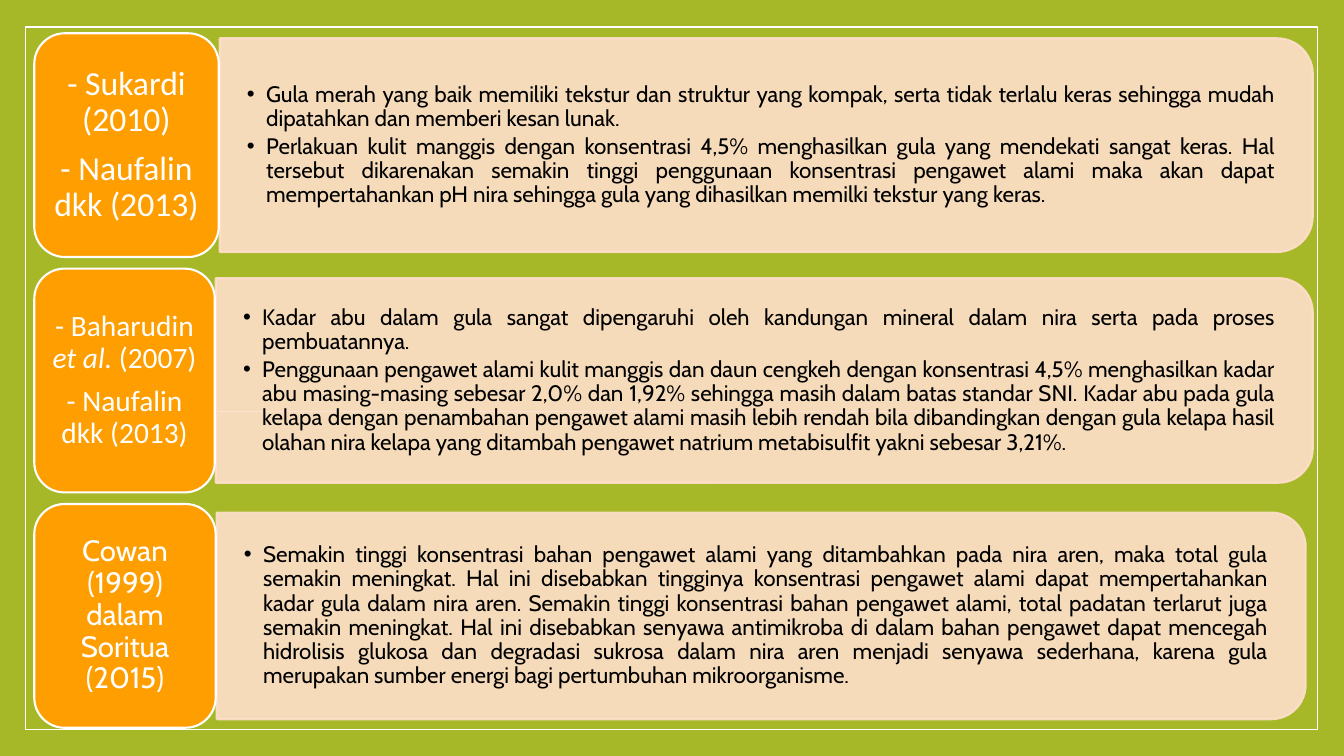
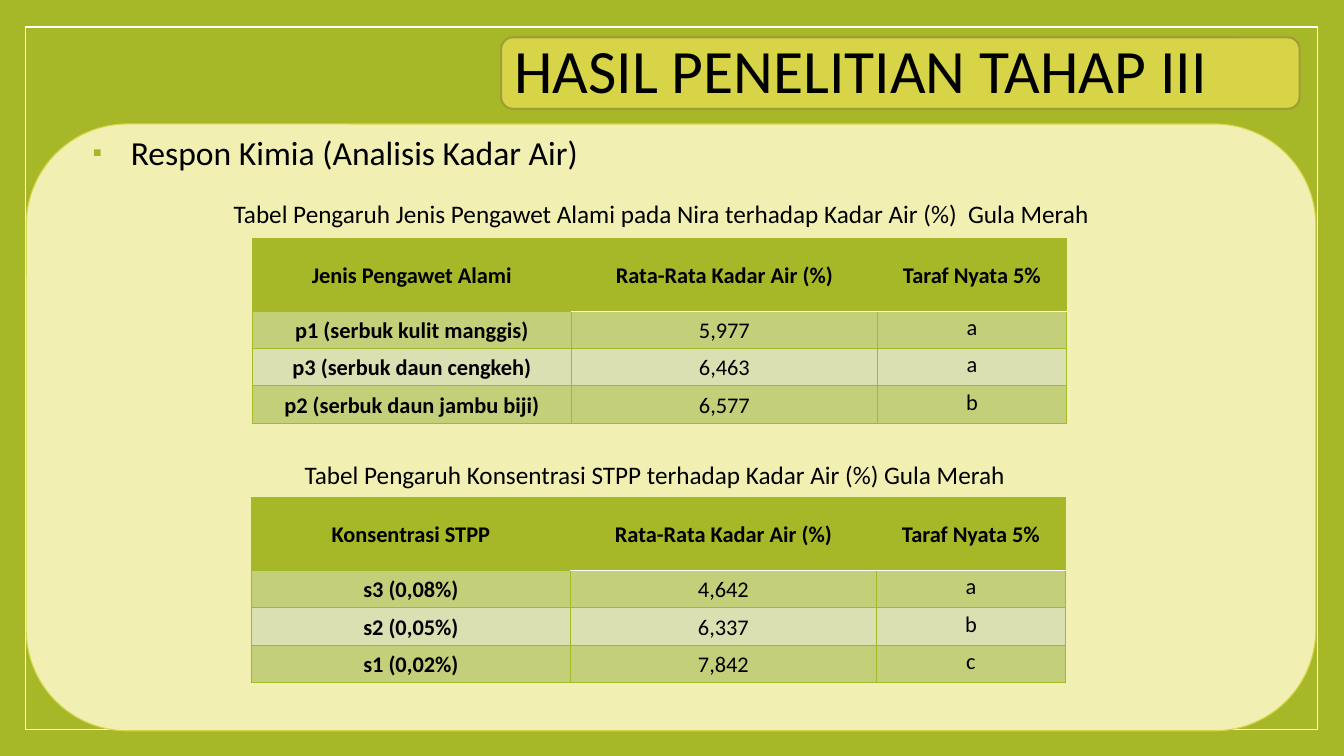
from lxml import etree
from pptx import Presentation
from pptx.dml.color import RGBColor
from pptx.enum.shapes import MSO_CONNECTOR, MSO_SHAPE
from pptx.enum.text import MSO_ANCHOR, MSO_AUTO_SIZE, PP_ALIGN
from pptx.oxml.ns import qn
from pptx.util import Inches, Pt

RECT, ROUND = MSO_SHAPE.RECTANGLE, MSO_SHAPE.ROUNDED_RECTANGLE
ROUND_TOP = MSO_SHAPE.ROUND_2_SAME_RECTANGLE
STRAIGHT = MSO_CONNECTOR.STRAIGHT
TOP, MIDDLE = MSO_ANCHOR.TOP, MSO_ANCHOR.MIDDLE
LEFT, CENTER, JUSTIFY = PP_ALIGN.LEFT, PP_ALIGN.CENTER, PP_ALIGN.JUSTIFY
NO_FIT = MSO_AUTO_SIZE.NONE

GREEN, WHITE, BLACK = "A6B727", "FFFFFF", "000000"
ORANGE, PEACH = "FE9E00", "FFDFCC"
YELLOW, OLIVE, CREAM = "D7D447", "9F9D35", "F1F0B2"
BANDS = ("C4CF7A", "DAE0B2")
THIN = 0.79

CARD_X, CARD_Y, CARD_H, CARD_STEP = 0.34, 0.33, 2.22, 2.335
CARDS = [
    dict(source=["- Sukardi (2010)", "- Naufalin dkk (2013)"], size=24, font="Calibri",
         width=1.83, right=13.02, height=2.12, points=[
             "Gula merah yang baik memiliki tekstur dan struktur yang kompak, serta tidak "
             "terlalu keras sehingga mudah dipatahkan dan memberi kesan lunak.",
             "Perlakuan kulit manggis dengan konsentrasi 4,5% menghasilkan gula yang "
             "mendekati sangat keras. Hal tersebut dikarenakan semakin tinggi penggunaan "
             "konsentrasi pengawet alami maka akan dapat mempertahankan pH nira sehingga "
             "gula yang dihasilkan memilki tekstur yang keras."]),
    dict(source=["- Baharudin *et al.* (2007)", "- Naufalin dkk (2013)"], size=21,
         font="Calibri", width=1.79, right=13.02, height=2.03, points=[
             "Kadar abu dalam gula sangat dipengaruhi oleh kandungan mineral dalam nira "
             "serta pada proses pembuatannya.",
             "Penggunaan pengawet alami kulit manggis dan daun cengkeh dengan konsentrasi "
             "4,5% menghasilkan kadar abu masing-masing sebesar 2,0% dan 1,92% sehingga "
             "masih dalam batas standar SNI. Kadar abu pada gula kelapa dengan penambahan "
             "pengawet alami masih lebih rendah bila dibandingkan dengan gula kelapa hasil "
             "olahan nira kelapa yang ditambah pengawet natrium metabisulfit yakni sebesar "
             "3,21%."]),
    dict(source=["Cowan (1999) dalam Soritua (2015)"], size=21, font="Cabin",
         width=1.8, right=12.95, height=2.05, points=[
             "Semakin tinggi konsentrasi bahan pengawet alami yang ditambahkan pada nira "
             "aren, maka total gula semakin meningkat. Hal ini disebabkan tingginya "
             "konsentrasi pengawet alami dapat mempertahankan kadar gula dalam nira aren. "
             "Semakin tinggi konsentrasi bahan pengawet alami, total padatan terlarut juga "
             "semakin meningkat. Hal ini disebabkan senyawa antimikroba di dalam bahan "
             "pengawet dapat mencegah hidrolisis glukosa dan degradasi sukrosa dalam nira "
             "aren menjadi senyawa sederhana, karena gula merupakan sumber energi bagi "
             "pertumbuhan mikroorganisme."]),
]

COLUMNS = [3.17, 3.03, 1.88]
MEASURES = ["Rata-Rata Kadar Air (%)", "Taraf Nyata 5%"]
TABLES = [
    dict(caption="Tabel Pengaruh Jenis Pengawet Alami pada Nira terhadap Kadar Air (%)  Gula Merah",
         caption_at=(2.05, 1.95, 9.02, 0.41), x=2.5, y=2.37, rows=[
             ["Jenis Pengawet Alami", *MEASURES],
             ["p1 (serbuk kulit manggis)", "5,977", "a"],
             ["p3 (serbuk daun cengkeh)", "6,463", "a"],
             ["p2 (serbuk daun jambu biji)", "6,577", "b"]]),
    dict(caption="Tabel Pengaruh Konsentrasi STPP terhadap Kadar Air (%) Gula Merah",
         caption_at=(2.26, 4.54, 8.47, 0.41), x=2.49, y=4.94, rows=[
             ["Konsentrasi STPP", *MEASURES],
             ["s3 (0,08%)", "4,642", "a"],
             ["s2 (0,05%)", "6,337", "b"],
             ["s1 (0,02%)", "7,842", "c"]]),
]


def rgb(color):
    """Turn a hex string into a colour."""
    return RGBColor.from_string(color)


def set_alpha(fill_format, percent):
    """Make a solid colour partly transparent."""
    for clr in fill_format.iter(qn("a:srgbClr")):
        etree.SubElement(clr, qn("a:alpha"), val=str(percent * 1000))


def set_bullet(p, char, indent, color, scale):
    """Give a paragraph a hanging bullet."""
    pPr = p._p.get_or_add_pPr()
    pPr.set("marL", str(Inches(indent)))
    pPr.set("indent", str(-Inches(indent)))
    clr = etree.SubElement(pPr, qn("a:buClr"))
    etree.SubElement(clr, qn("a:srgbClr"), val=color)
    etree.SubElement(pPr, qn("a:buSzPct"), val=str(scale * 1000))
    etree.SubElement(pPr, qn("a:buFont"), typeface="Arial")
    etree.SubElement(pPr, qn("a:buChar"), char=char)


def set_border(cell, side, color, width):
    """Draw one side of a table cell."""
    ln = etree.SubElement(cell._tc.get_or_add_tcPr(), qn(f"a:ln{side}"), w=str(Pt(width)))
    fill = etree.SubElement(ln, qn("a:solidFill"))
    etree.SubElement(fill, qn("a:srgbClr"), val=color)


def write(tf, paragraphs, size=18, font="Calibri", color=BLACK, bold=False, align=LEFT,
          spacing=0.9, after=0, bullet=None):
    """Fill a text frame; words between asterisks are italic."""
    for i, text in enumerate(paragraphs):
        p = tf.add_paragraph() if i else tf.paragraphs[0]
        p.alignment, p.line_spacing = align, spacing
        p.space_before, p.space_after = Pt(0), Pt(after)
        if bullet:
            set_bullet(p, *bullet)
        for j, part in enumerate(text.split("*")):
            r = p.add_run()
            r.text = part
            r.font.size, r.font.name = Pt(size), font
            r.font.bold, r.font.italic = bold, j % 2 == 1
            r.font.color.rgb = rgb(color)


def set_frame(tf, anchor=TOP, inset=(0.1, 0.05)):
    """Set wrapping, anchor and insets of a text frame."""
    tf.word_wrap, tf.auto_size, tf.vertical_anchor = True, NO_FIT, anchor
    tf.margin_left = tf.margin_right = Inches(inset[0])
    tf.margin_top = tf.margin_bottom = Inches(inset[1])
    return tf


class Deck:
    """Hold the shared style and the current slide."""

    def __init__(self):
        self.prs = Presentation()
        self.prs.slide_width, self.prs.slide_height = Inches(13.33), Inches(7.5)
        bg = self.prs.slide_master.background.fill
        bg.solid()
        bg.fore_color.rgb = rgb(GREEN)
        self.s = None

    def slide(self, layout):
        """Start a slide with the white frame."""
        self.s = self.prs.slides.add_slide(self.prs.slide_layouts[layout])
        self.shape(RECT, 0.25, 0.27, 12.82, 6.97, GREEN, WHITE, 1)

    def shape(self, kind, x, y, w, h, fill, line, width=1.5):
        """Add a filled and outlined shape."""
        sp = self.s.shapes.add_shape(kind, Inches(x), Inches(y), Inches(w), Inches(h))
        sp.shadow.inherit = False
        sp.fill.solid()
        sp.fill.fore_color.rgb = rgb(fill)
        sp.line.color.rgb = rgb(line)
        sp.line.width = Pt(width)
        return sp

    def line(self, x1, y1, x2, y2, color, width):
        """Add a straight line."""
        cn = self.s.shapes.add_connector(STRAIGHT, Inches(x1), Inches(y1), Inches(x2), Inches(y2))
        cn.line.color.rgb = rgb(color)
        cn.line.width = Pt(width)
        etree.SubElement(cn._element.spPr, qn("a:effectLst"))

    def text(self, x, y, w, h, paragraphs, anchor=TOP, inset=(0.1, 0.05), **fmt):
        """Add a text box."""
        sp = self.s.shapes.add_textbox(Inches(x), Inches(y), Inches(w), Inches(h))
        write(set_frame(sp.text_frame, anchor, inset), paragraphs, **fmt)

    def title(self, x, y, w, h, text):
        """Set the title on a rounded plate."""
        self.shape(ROUND, x, y, w, h, YELLOW, OLIVE)
        sp = self.s.shapes.title
        sp.left, sp.top, sp.width, sp.height = (Inches(v) for v in (x + 0.03, y, w - 0.06, h))
        self.s.shapes._spTree.append(sp._element)
        write(set_frame(sp.text_frame, MIDDLE), [text], size=44, align=JUSTIFY)

    def card(self, y, source, size, font, width, right, height, points):
        """Add a source card with its panel of findings."""
        x, mid = CARD_X + width + 0.01, y + CARD_H / 2
        w = right - x
        panel = self.shape(ROUND_TOP, x + (w - height) / 2, mid - w / 2, height, w, PEACH, PEACH)
        panel.rotation = 90
        set_alpha(panel._element.spPr, 90)
        self.text(x, mid - height / 2 + 0.1, w - 0.1, height - 0.2, points, MIDDLE, (0.27, 0.14),
                  size=16, font="Cabin", align=JUSTIFY, after=2.8,
                  bullet=("•", 0.19, BLACK, 100))
        sp = self.shape(ROUND, CARD_X, y, width, CARD_H, ORANGE, WHITE)
        write(set_frame(sp.text_frame, MIDDLE, (0.09, 0.04)), source, size=size, font=font,
              color=WHITE, align=CENTER, after=size * 0.37)

    def table(self, x, y, rows):
        """Add a banded table with a tall header."""
        heights = [0.72] + [0.37] * (len(rows) - 1)
        table = self.s.shapes.add_table(len(rows), len(COLUMNS), Inches(x), Inches(y),
                                        Inches(sum(COLUMNS)), Inches(sum(heights))).table
        table.first_row = table.horz_banding = False
        for column, width in zip(table.columns, COLUMNS):
            column.width = Inches(width)
        for i, (values, height) in enumerate(zip(rows, heights)):
            table.rows[i].height = Inches(height)
            for j, value in enumerate(values):
                self.cell(table.cell(i, j), i, j, value)

    def cell(self, cell, i, j, value):
        """Format and fill one table cell."""
        for side in "LRTB":
            rule = j > 0 and (i, side) in ((0, "B"), (1, "T"))
            set_border(cell, side, WHITE if rule else GREEN, 1.5 if rule else THIN)
        cell.fill.solid()
        cell.fill.fore_color.rgb = rgb(BANDS[(i - 1) % 2] if i else GREEN)
        narrow = j == 2
        cell.margin_left = cell.margin_right = Inches(0.01 if narrow else 0.08)
        cell.margin_top = cell.margin_bottom = Inches(0.01 if narrow else 0)
        cell.vertical_anchor = TOP if narrow and i else MIDDLE
        write(cell.text_frame, [value], size=16, bold=i == 0 or j == 0, align=CENTER,
              spacing=1.07)


def main():
    """Build and save both slides."""
    deck = Deck()
    deck.slide(6)
    deck.line(2.16, 4.08, 11.16, 4.08, WHITE, THIN)
    for i, card in enumerate(CARDS):
        deck.card(CARD_Y + i * CARD_STEP, **card)

    deck.slide(5)
    deck.title(4.97, 0.37, 7.92, 0.71, "HASIL PENELITIAN TAHAP III")
    deck.shape(ROUND, 0.26, 1.23, 12.79, 6.02, CREAM, YELLOW, THIN)
    deck.text(0.82, 1.3, 5.26, 0.41, ["Respon Kimia (Analisis Kadar Air)"], size=24,
              bullet=("▪", 0.38, GREEN, 80))
    for table in TABLES:
        deck.text(*table["caption_at"], [table["caption"]], align=CENTER)
        deck.table(table["x"], table["y"], table["rows"])
    deck.prs.save("out.pptx")


if __name__ == "__main__":
    main()
